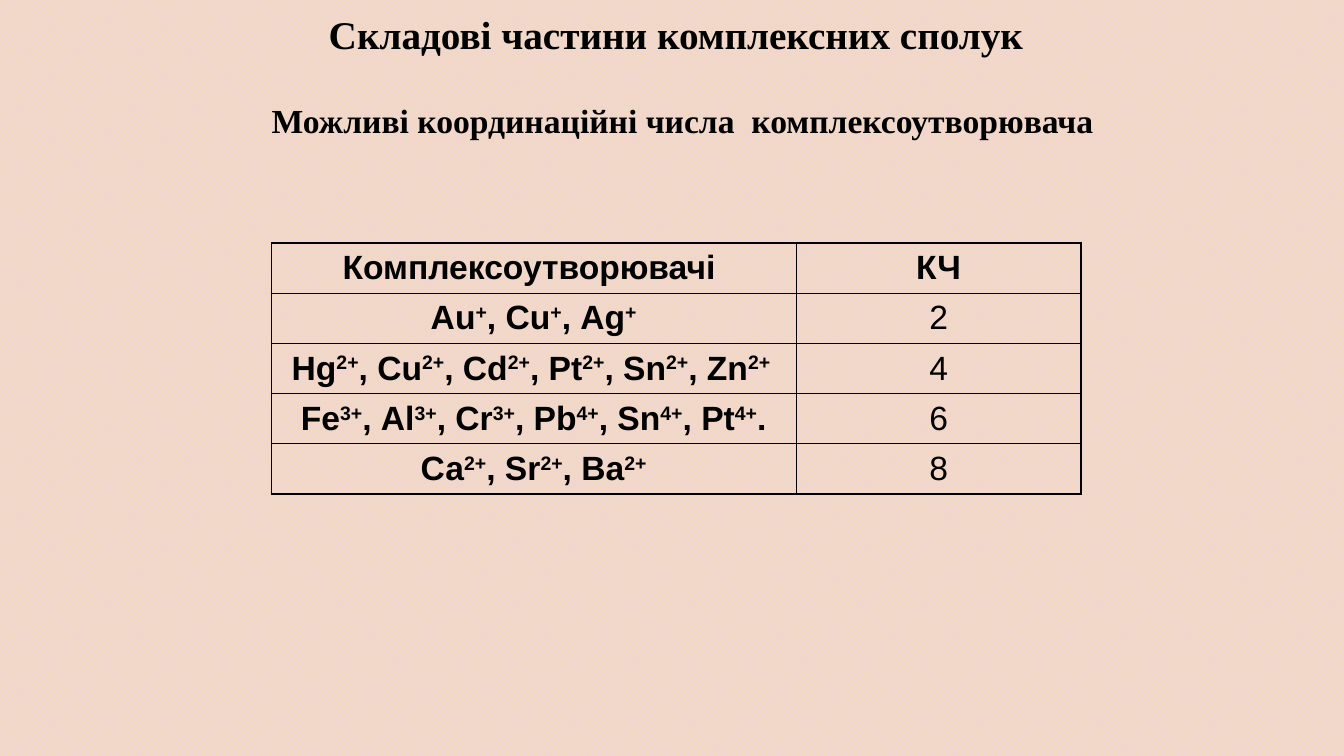
from dataclasses import dataclass

from lxml import etree
from pptx import Presentation
from pptx.dml.color import RGBColor
from pptx.enum.dml import MSO_PATTERN
from pptx.enum.text import MSO_ANCHOR, MSO_AUTO_SIZE, PP_ALIGN
from pptx.oxml.ns import qn
from pptx.util import Pt

CENTER = PP_ALIGN.CENTER
TOP, MIDDLE = MSO_ANCHOR.TOP, MSO_ANCHOR.MIDDLE
NO_AUTOFIT = MSO_AUTO_SIZE.NONE
SMALL_CHECKS = MSO_PATTERN.SMALL_CHECKER_BOARD


@dataclass(frozen=True)
class Theme:
    ink: RGBColor = RGBColor(0x00, 0x00, 0x00)
    checks: RGBColor = RGBColor(0xF0, 0xE0, 0xB5)
    ground: RGBColor = RGBColor(0xF3, 0xD5, 0xD3)
    heading_font: str = "Times New Roman"
    table_font: str = "Arial"
    title_size: float = 28
    text_size: float = 24
    border: float = 1
    superscript: str = "30000"


@dataclass(frozen=True)
class Heading:
    text: str
    size: float
    box: tuple[float, float, float, float]
    anchor: MSO_ANCHOR


@dataclass(frozen=True)
class Ion:
    symbol: str
    charge: str


@dataclass(frozen=True)
class IonGroup:
    ions: tuple[Ion, ...]
    number: str
    ending: str = ""


THEME = Theme()

HEADINGS = (
    Heading("Складові частини комплексних сполук", THEME.title_size,
            (204.5, 3.6, 556.5, 41), TOP),
    Heading("Можливі координаційні числа  комплексоутворювача", THEME.text_size,
            (183, 54.7, 609, 62), MIDDLE),
)

COLUMN_TITLES = ("Комплексоутворювачі ", "КЧ")
ION_GROUPS = (
    IonGroup((Ion("Аu", "+"), Ion("Сu", "+"), Ion("Аg", "+")), "2"),
    IonGroup((Ion("Нg", "2+"), Ion("Сu", "2+"), Ion("Сd", "2+"),
              Ion("Pt", "2+"), Ion("Sn", "2+"), Ion("Zn", "2+ ")), "4"),
    IonGroup((Ion("Fе", "3+"), Ion("Аl", "3+"), Ion("Сr", "3+"),
              Ion("Рb", "4+"), Ion("Sn", "4+"), Ion("Рt", "4+")), "6", "."),
    IonGroup((Ion("Са", "2+"), Ion("Sr", "2+"), Ion("Ва", "2+")), "8"),
)
TABLE_LEFT, TABLE_TOP = 193.7, 173.5
COLUMN_WIDTHS = (375, 203.5)
ROW_HEIGHT = 35.86


def add_run(paragraph, text: str, font_name: str, size: float,
            bold: bool = True, raised: bool = False) -> None:
    run = paragraph.add_run()
    run.text = text
    run.font.name = font_name
    run.font.size = Pt(size)
    run.font.bold = bold
    run.font.color.rgb = THEME.ink
    if raised:
        run.font._element.set("baseline", THEME.superscript)


def fill_heading(placeholder, heading: Heading) -> None:
    left, top, width, height = map(Pt, heading.box)
    placeholder.left, placeholder.top = left, top
    placeholder.width, placeholder.height = width, height
    frame = placeholder.text_frame
    frame.word_wrap = True
    frame.auto_size = NO_AUTOFIT
    frame.vertical_anchor = heading.anchor
    paragraph = frame.paragraphs[0]
    paragraph.alignment = CENTER
    paragraph.line_spacing = 1.0
    paragraph.space_before = Pt(0)
    add_run(paragraph, heading.text, THEME.heading_font, heading.size)


def style_cell(cell) -> None:
    cell.fill.background()
    cell.vertical_anchor = MIDDLE
    cell.margin_left = cell.margin_right = Pt(0)
    cell.margin_top = cell.margin_bottom = Pt(0)
    cell.text_frame.paragraphs[0].alignment = CENTER
    properties = cell._tc.get_or_add_tcPr()
    for position, side in enumerate(("a:lnL", "a:lnR", "a:lnT", "a:lnB")):
        line = etree.Element(qn(side), w=str(Pt(THEME.border)))
        fill = etree.SubElement(line, qn("a:solidFill"))
        etree.SubElement(fill, qn("a:srgbClr"), val=str(THEME.ink))
        properties.insert(position, line)


def add_cell_run(cell, text: str, bold: bool = True, raised: bool = False) -> None:
    add_run(cell.text_frame.paragraphs[0], text, THEME.table_font,
            THEME.text_size, bold, raised)


def write_ions(cell, group: IonGroup) -> None:
    for index, ion in enumerate(group.ions):
        add_cell_run(cell, f", {ion.symbol}" if index else ion.symbol)
        add_cell_run(cell, ion.charge, raised=True)
    if group.ending:
        add_cell_run(cell, group.ending)


def add_number_table(slide) -> None:
    row_count = len(ION_GROUPS) + 1
    table = slide.shapes.add_table(
        row_count, len(COLUMN_WIDTHS), Pt(TABLE_LEFT), Pt(TABLE_TOP),
        Pt(sum(COLUMN_WIDTHS)), Pt(ROW_HEIGHT * row_count)).table
    table.first_row = table.horz_banding = False
    for column, width in zip(table.columns, COLUMN_WIDTHS):
        column.width = Pt(width)
    for row in table.rows:
        row.height = Pt(ROW_HEIGHT)
    for cell in table.iter_cells():
        style_cell(cell)
    for index, column_title in enumerate(COLUMN_TITLES):
        add_cell_run(table.cell(0, index), column_title)
    for index, group in enumerate(ION_GROUPS, start=1):
        write_ions(table.cell(index, 0), group)
        add_cell_run(table.cell(index, 1), group.number, bold=False)


def main() -> None:
    presentation = Presentation()
    presentation.slide_width, presentation.slide_height = Pt(960), Pt(540)
    slide = presentation.slides.add_slide(presentation.slide_layouts[0])

    # Checked background
    background = slide.background.fill
    background.patterned()
    background.pattern = SMALL_CHECKS
    background.fore_color.rgb = THEME.checks
    background.back_color.rgb = THEME.ground

    # Title and subtitle
    for placeholder, heading in zip(slide.placeholders, HEADINGS):
        fill_heading(placeholder, heading)

    # Coordination numbers
    add_number_table(slide)
    presentation.save("out.pptx")


if __name__ == "__main__":
    main()
